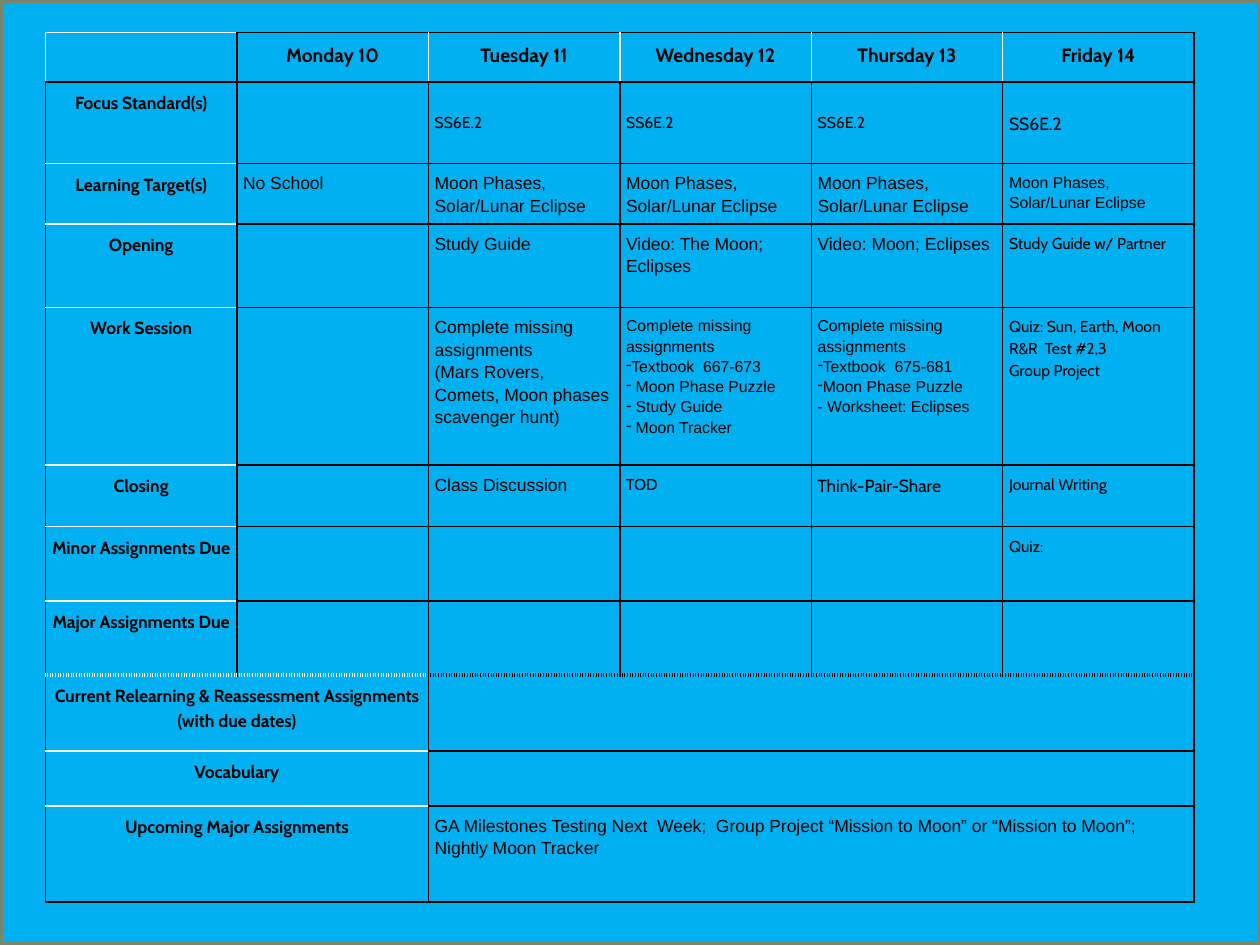
"""Build a one-slide weekly lesson plan as a table."""
from lxml import etree
from pptx import Presentation, util as u
from pptx.dml import color
from pptx.enum import shapes, text
from pptx.oxml import ns

COLORS = {"black": "000000", "white": "FFFFFF", "sky": "00B0F0", "frame": "7A866C"}
LEFT, TOP, COLUMN_WIDTH = 0.36, 0.26, 1.52
ROW_HEIGHTS = [0.39, 0.65, 0.48, 0.66, 1.25, 0.49, 0.59, 0.59, 0.6, 0.44, 0.76]
DOTTED_EDGE = 8
BULLET = "•"

DAYS = ["Monday 10", "Tuesday 11", "Wednesday 12", "Thursday 13", "Friday 14"]
LABELS = [
    "Focus Standard(s)", "Learning Target(s)", "Opening", "Work Session", "Closing",
    "Minor Assignments Due", "Major Assignments Due",
    "Current Relearning & Reassessment Assignments (with due dates)",
    "Vocabulary", "Upcoming Major Assignments",
]
STANDARD = "SS6E.2"
TARGET = "Moon Phases, Solar/Lunar Eclipse"
MISSING = "Complete missing assignments"
ENTRIES = {
    (1, 2): ("Cabin", 9, [STANDARD]),
    (1, 3): ("Cabin", 9, [STANDARD]),
    (1, 4): ("Cabin", 9, [STANDARD]),
    (1, 5): ("Cabin", 10, [STANDARD]),
    (2, 1): ("Arial", 10, ["No School"]),
    (2, 2): ("Arial", 10, [TARGET]),
    (2, 3): ("Arial", 10, [TARGET]),
    (2, 4): ("Arial", 10, [TARGET]),
    (2, 5): ("Arial", 9, [TARGET]),
    (3, 2): ("Arial", 10, ["Study Guide"]),
    (3, 3): ("Arial", 10, ["Video: The Moon; Eclipses"]),
    (3, 4): ("Arial", 10, ["Video: Moon; Eclipses"]),
    (3, 5): ("Cabin", 9, ["Study Guide w/ Partner"]),
    (4, 2): ("Arial", 10, [MISSING, "(Mars Rovers, Comets, Moon phases scavenger hunt)"]),
    (4, 3): ("Arial", 9, [MISSING, "•Textbook  667-673", "• Moon Phase Puzzle",
                          "• Study Guide", "• Moon Tracker"]),
    (4, 4): ("Arial", 9, [MISSING, "•Textbook  675-681", "•Moon Phase Puzzle",
                          "- Worksheet: Eclipses"]),
    (4, 5): ("Cabin", 9, ["Quiz: Sun, Earth, Moon", "R&R  Test #2,3", "Group Project"]),
    (5, 2): ("Arial", 10, ["Class Discussion"]),
    (5, 3): ("Cabin", 9, ["TOD"]),
    (5, 4): ("Cabin", 10, ["Think-Pair-Share"]),
    (5, 5): ("Cabin", 9, ["Journal Writing"]),
    (6, 5): ("Cabin", 9, ["Quiz:"]),
    (10, 2): ("Arial", 10, ["GA Milestones Testing Next  Week;  Group Project "
                            "“Mission to Moon” or “Mission to Moon”; Nightly Moon Tracker"]),
}


def rgb(name):
    return color.RGBColor.from_string(COLORS[name])


def write(cell, font, size, lines, heading=False):
    for index, line in enumerate(lines):
        para = cell.text_frame.paragraphs[0] if index == 0 else cell.text_frame.add_paragraph()
        para.line_spacing = 1.15
        para.alignment = text.PP_ALIGN.CENTER if heading else text.PP_ALIGN.LEFT
        if line.startswith(BULLET):
            properties = para._p.get_or_add_pPr()
            properties.set("marL", "0")
            properties.set("indent", "0")
            etree.SubElement(properties, ns.qn("a:buChar"), char="-")
        span = para.add_run()
        span.text = line.removeprefix(BULLET)
        span.font.name, span.font.size, span.font.bold = font, u.Pt(size), heading
        span.font.color.rgb = rgb("black")


def horizontal_edge(edge, column, label_width):
    white = column < label_width and (edge == 0 or 2 <= edge < len(ROW_HEIGHTS))
    return "white" if white else "black", edge == DOTTED_EDGE


def vertical_edge(edge, row):
    return "white" if row == 0 and edge in (0, 2, 3, 4, 5) else "black", False


def set_borders(cell, row, column):
    label_width = 2 if row >= DOTTED_EDGE else 1
    sides = {
        "L": vertical_edge(column, row),
        "R": vertical_edge(column + 1, row),
        "T": horizontal_edge(row, column, label_width),
        "B": horizontal_edge(row + 1, column, 1 if row + 1 == DOTTED_EDGE else label_width),
    }
    properties = cell._tc.get_or_add_tcPr()
    for side, (name, dotted) in sides.items():
        width = u.Pt(2.25 if dotted else 1)
        line = etree.SubElement(properties, ns.qn(f"a:ln{side}"), w=str(width))
        fill = etree.SubElement(line, ns.qn("a:solidFill"))
        etree.SubElement(fill, ns.qn("a:srgbClr"), val=COLORS[name])
        etree.SubElement(line, ns.qn("a:prstDash"), val="dot" if dotted else "solid")


def add_backdrop(deck, page):
    page.background.fill.solid()
    page.background.fill.fore_color.rgb = rgb("black")
    backdrop = page.shapes.add_shape(
        shapes.MSO_SHAPE.RECTANGLE, 0, 0, deck.slide_width, deck.slide_height)
    backdrop.shadow.inherit = False
    backdrop.fill.solid()
    backdrop.fill.fore_color.rgb = rgb("sky")
    backdrop.line.color.rgb = rgb("frame")
    backdrop.line.width = u.Pt(3)


def add_plan(page):
    columns = len(DAYS) + 1
    plan = page.shapes.add_table(
        len(ROW_HEIGHTS), columns, u.Inches(LEFT), u.Inches(TOP),
        u.Inches(COLUMN_WIDTH * columns), u.Inches(sum(ROW_HEIGHTS))).table
    plan.first_row = plan.horz_banding = False
    for column in plan.columns:
        column.width = u.Inches(COLUMN_WIDTH)
    for row, height in enumerate(ROW_HEIGHTS):
        plan.rows[row].height = u.Inches(height)
        if row >= DOTTED_EDGE:
            plan.cell(row, 0).merge(plan.cell(row, 1))
            plan.cell(row, 2).merge(plan.cell(row, columns - 1))
        for column in range(columns):
            cell = plan.cell(row, column)
            cell.margin_left = cell.margin_right = u.Inches(0.05)
            cell.margin_top = cell.margin_bottom = u.Inches(0.06)
            set_borders(cell, row, column)
            cell.fill.background()
            if row == 0 and column > 0:
                write(cell, "Cabin", 11, [DAYS[column - 1]], heading=True)
            elif row > 0 and column == 0:
                write(cell, "Cabin", 10, [LABELS[row - 1]], heading=True)
            elif (row, column) in ENTRIES:
                write(cell, *ENTRIES[row, column])
                if row == 1:
                    cell.margin_top = u.Inches(0.23)
            else:
                para = cell.text_frame.paragraphs[0]
                etree.SubElement(para._p, ns.qn("a:endParaRPr"), sz="900")


def main():
    deck = Presentation()
    deck.slide_width, deck.slide_height = u.Inches(10), u.Inches(7.5)
    page = deck.slides.add_slide(deck.slide_layouts[6])
    add_backdrop(deck, page)
    add_plan(page)
    deck.save("out.pptx")


if __name__ == "__main__":
    main()
